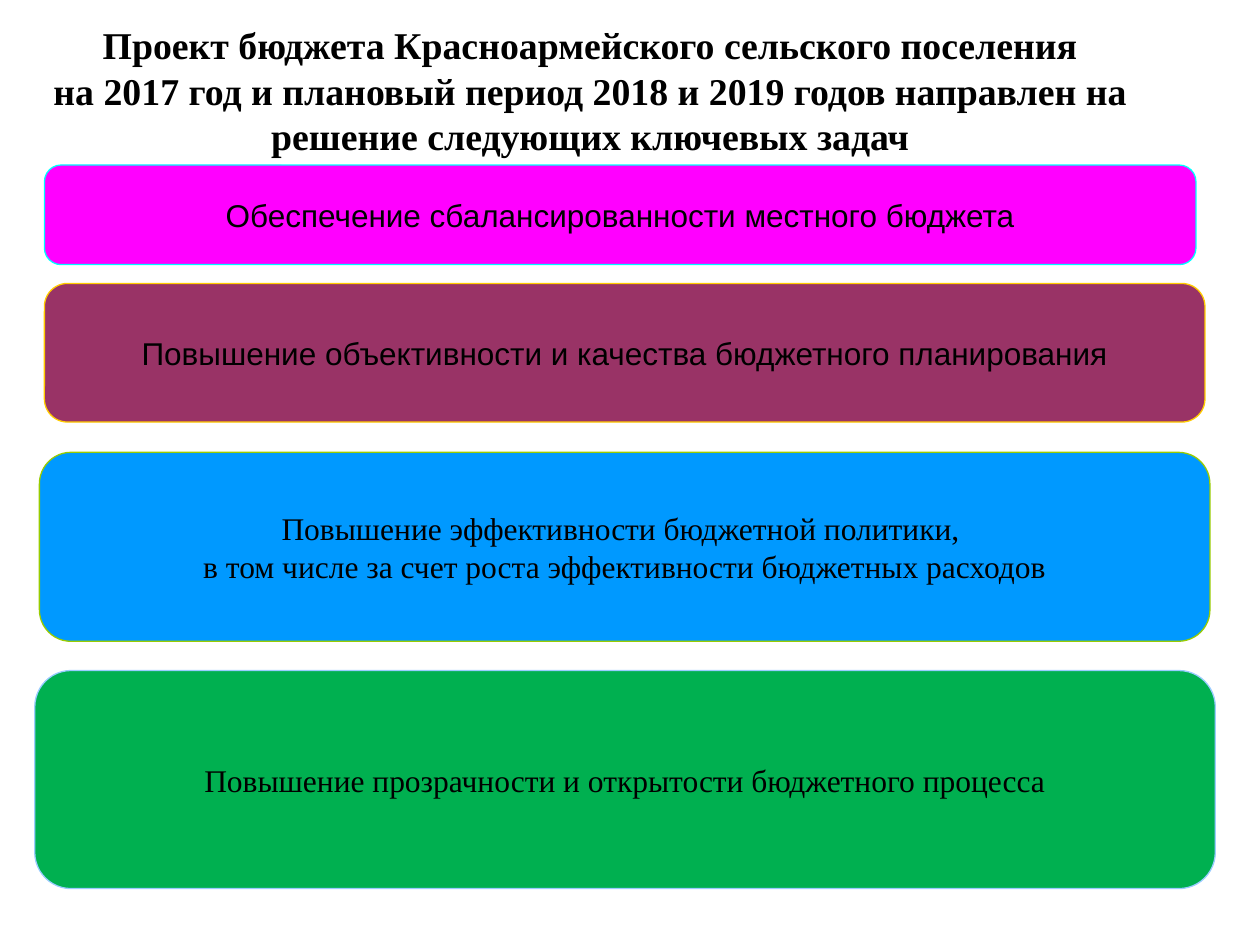
from dataclasses import dataclass

from pptx import Presentation
from pptx.dml.color import RGBColor
from pptx.enum import shapes, text
from pptx.util import Pt


@dataclass(frozen=True)
class Theme:
    ink: str = "000000"
    pink: str = "FF00FF"
    plum: str = "993366"
    blue: str = "0099FF"
    green: str = "00B050"
    aqua: str = "00FFFF"
    gold: str = "FFCC00"
    lime: str = "99CC00"
    sky: str = "99CCFF"
    sans: str = "Arial"
    serif: str = "Times New Roman"
    head: float = 21.6
    body: float = 18


THEME = Theme()

TITLE = ("Проект бюджета Красноармейского сельского поселения\n"
         "на 2017 год и плановый период 2018 и 2019 годов направлен на "
         "решение следующих ключевых задач")

# Box in points, fill, line, font, paragraphs
GOALS = [
    ((25.4, 94.3, 658, 56.9), THEME.pink, THEME.aqua, THEME.sans,
     ["Обеспечение сбалансированности местного бюджета"]),
    ((25.4, 162, 663.2, 79.2), THEME.plum, THEME.gold, THEME.sans,
     ["Повышение объективности и качества бюджетного планирования"]),
    ((22.5, 258.5, 668.9, 108), THEME.blue, THEME.lime, THEME.serif,
     ["Повышение эффективности бюджетной политики, ",
      "в том числе за счет роста эффективности бюджетных расходов"]),
    ((19.9, 383.2, 674.6, 124.6), THEME.green, THEME.sky, THEME.serif,
     ["Повышение прозрачности и открытости бюджетного процесса"]),
]


def write(shape, paras, font, size, bold=False, wrap=True):
    """Fill a shape with centred paragraphs; a newline is a line break."""
    frame = shape.text_frame
    frame.word_wrap = wrap
    frame.vertical_anchor = text.MSO_ANCHOR.MIDDLE
    for i, words in enumerate(paras):
        para = frame.add_paragraph() if i else frame.paragraphs[0]
        para.text = words
        para.alignment = text.PP_ALIGN.CENTER
        for run in para.runs:
            run.font.name = font
            run.font.size = Pt(size)
            run.font.bold = bold
            run.font.color.rgb = RGBColor.from_string(THEME.ink)


def add_title(slide):
    box = slide.shapes.add_textbox(Pt(0), Pt(20.2), Pt(674.6), Pt(62.6))
    write(box, [TITLE], THEME.serif, THEME.head, bold=True)


def add_goal(slide, box, fill, line, font, paras):
    card = slide.shapes.add_shape(
        shapes.MSO_SHAPE.ROUNDED_RECTANGLE, *map(Pt, box))
    card.shadow.inherit = False
    card.fill.solid()
    card.fill.fore_color.rgb = RGBColor.from_string(fill)
    card.line.color.rgb = RGBColor.from_string(line)
    card.line.width = Pt(0.75)
    write(card, paras, font, THEME.body, wrap=False)


def main():
    deck = Presentation()
    deck.slide_width, deck.slide_height = Pt(720), Pt(540)
    slide = deck.slides.add_slide(deck.slide_layouts[6])
    add_title(slide)
    for goal in GOALS:
        add_goal(slide, *goal)
    deck.save("out.pptx")


if __name__ == "__main__":
    main()
